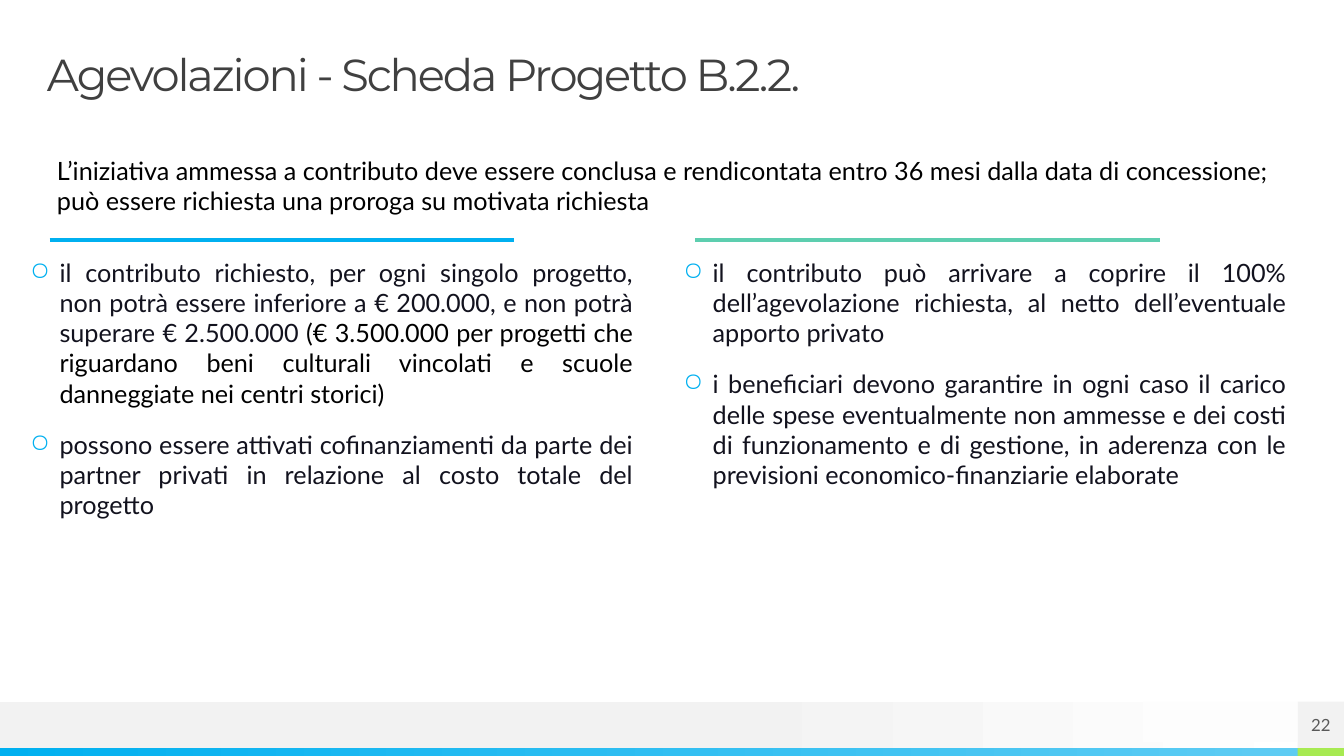
from lxml.etree import SubElement
from pptx import Presentation
from pptx.dml.color import RGBColor
from pptx.enum.shapes import MSO_CONNECTOR, MSO_SHAPE
from pptx.enum.text import MSO_ANCHOR, PP_ALIGN
from pptx.oxml.ns import qn
from pptx.util import Inches, Pt

COLORS = {
    "blue": "00B0F0", "sky": "5ECCF3", "lime": "A7EA52", "teal": "5DCEAF",
    "grey": "F2F2F2", "white": "FFFFFF", "pale": "FDFDFD",
    "title": "404040", "number": "595959", "ink": "12121E", "black": "000000",
}


def rgb(name):
    return RGBColor.from_string(COLORS[name])


def add_text(p, text, size=18, font="Lato", color="black", tracking=None):
    r = p.add_run()
    r.text = text
    r.font.size = Pt(size)
    r.font.name = font
    r.font.color.rgb = rgb(color)
    if tracking is not None:
        r._r.get_or_add_rPr().set("spc", str(int(tracking * 100)))


class Deck:
    def __init__(self):
        self.prs = Presentation()
        self.prs.slide_width = Inches(13.33)
        self.prs.slide_height = Inches(7.5)
        self.s = self.prs.slides.add_slide(self.prs.slide_layouts[6])

    def x(self, share):
        return int(self.prs.slide_width * share / 100)

    def y(self, share):
        return int(self.prs.slide_height * share / 100)

    def box(self, left, top, width, height):
        return self.x(left), self.y(top), self.x(width), self.y(height)

    def frame(self, sp, inset=0, anchor=MSO_ANCHOR.TOP):
        tf = sp.text_frame
        tf.word_wrap = True
        tf.vertical_anchor = anchor
        tf.margin_left = tf.margin_right = Inches(inset)
        tf.margin_top = tf.margin_bottom = Inches(inset / 2)
        return tf

    def rect(self, area, *stops):
        sp = self.s.shapes.add_shape(MSO_SHAPE.RECTANGLE, *self.box(*area))
        sp.shadow.inherit = False
        sp.line.fill.background()
        if len(stops) == 1:
            sp.fill.solid()
            sp.fill.fore_color.rgb = rgb(stops[0])
            return sp
        sp.fill.gradient()
        sp.fill.gradient_angle = 0
        for stop, (position, color) in zip(sp.fill.gradient_stops, stops):
            stop.position = position
            stop.color.rgb = rgb(color)
        return sp

    def rule(self, left, top, width, color):
        line = self.s.shapes.add_connector(
            MSO_CONNECTOR.STRAIGHT, self.x(left), self.y(top),
            self.x(left + width), self.y(top))
        line.line.color.rgb = rgb(color)
        line.line.width = Pt(2.25)
        SubElement(line._element.spPr, qn("a:effectLst"))

    def text(self, area, *lines, inset=0, anchor=MSO_ANCHOR.TOP, spacing=1.0, **style):
        tf = self.frame(self.s.shapes.add_textbox(*self.box(*area)), inset, anchor)
        for i, line in enumerate(lines):
            p = tf.add_paragraph() if i else tf.paragraphs[0]
            p.line_spacing = spacing
            add_text(p, line, **style)

    def bullets(self, area, *items):
        tf = self.frame(self.s.shapes.add_textbox(*self.box(*area)))
        for i, item in enumerate(items):
            p = tf.add_paragraph() if i else tf.paragraphs[0]
            p.alignment = PP_ALIGN.JUSTIFY
            p.space_before, p.space_after = Pt(10), Pt(5)
            pPr = p._p.get_or_add_pPr()
            pPr.set("marL", str(Inches(0.29)))
            pPr.set("indent", str(-Inches(0.29)))
            tint = SubElement(pPr, qn("a:buClr"))
            SubElement(tint, qn("a:srgbClr"), val=COLORS["blue"])
            SubElement(pPr, qn("a:buChar"), char="○")
            for text, color in item:
                add_text(p, text, color=color)

    def page_number(self, area, number):
        tf = self.frame(self.rect(area, "grey"), anchor=MSO_ANCHOR.MIDDLE)
        p = tf.paragraphs[0]
        p.alignment = PP_ALIGN.CENTER
        add_text(p, number, size=12, color="number")


def main():
    deck = Deck()
    edge, corner = 96.55, 3.45
    band_top, band_height, strip_top, strip_height = 92.8, 6.15, 98.95, 1.05

    deck.rect((0, band_top, 100, band_height), (0.53, "grey"), (1, "white"))
    deck.rect((0, strip_top, edge, strip_height), (0, "blue"), (1, "sky"))
    deck.rect((edge, strip_top, corner, strip_height), "lime")
    for left, color in ((3.7, "blue"), (51.75, "teal")):
        deck.rule(left, 31.75, 34.55, color)

    deck.text((3.5, 7.05, 93, 6.25), "Agevolazioni - Scheda Progetto B.2.2.",
              anchor=MSO_ANCHOR.MIDDLE, spacing=0.9, size=32,
              font="Montserrat", color="title", tracking=-1.5)
    deck.text((3.5, 19.85, 94.75, 13.45),
              "L’iniziativa ammessa a contributo deve essere conclusa e rendicontata "
              "entro 36 mesi dalla data di concessione;",
              "può essere richiesta una proroga su motivata richiesta", inset=0.1)

    columns = (
        (2.25, (
            (("il contributo richiesto, per ogni singolo progetto, non potrà essere "
              "inferiore a € 200.000, e non potrà superare € 2.500.000 ", "ink"),
             ("(€ 3.500.000 per progetti che riguardano beni culturali vincolati e "
              "scuole danneggiate nei centri storici)", "black")),
            (("possono essere attivati cofinanziamenti da parte dei partner privati "
              "in relazione al costo totale del progetto", "ink"),))),
        (50.85, (
            (("il contributo può arrivare a coprire il 100% dell’agevolazione "
              "richiesta, al netto dell’eventuale apporto privato", "ink"),),
            (("i beneficiari devono garantire in ogni caso il carico delle spese "
              "eventualmente non ammesse e dei costi di funzionamento e di gestione, "
              "in aderenza con le previsioni economico-finanziarie elaborate", "ink"),))),
    )
    for left, items in columns:
        deck.bullets((left, 34, 44.85, 59.6), *items)

    deck.page_number((edge, band_top, corner, band_height), "22")
    deck.rect((85.05, band_top, 11.5, 5.35), "pale")
    deck.prs.save("out.pptx")


if __name__ == "__main__":
    main()
